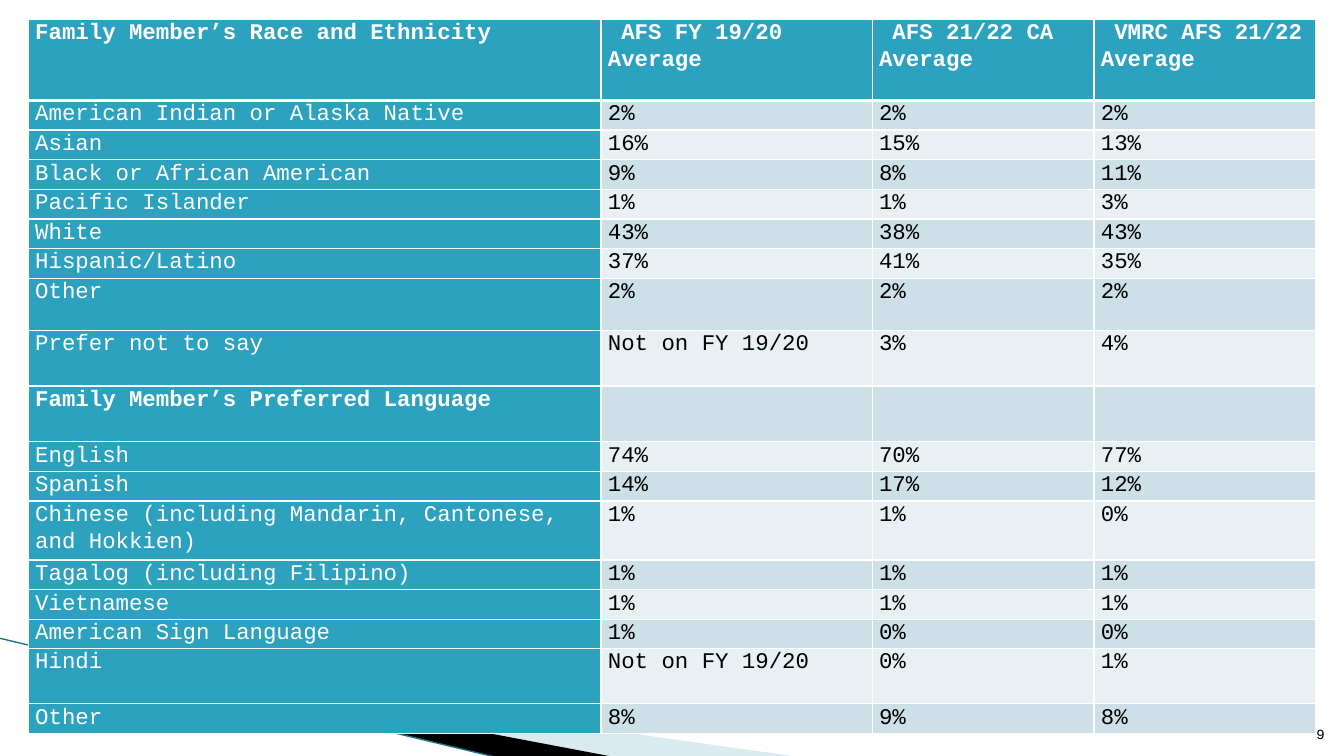
from lxml import etree
from pptx import Presentation
from pptx import util as u
from pptx.dml.color import RGBColor
from pptx.enum import shapes, text
from pptx.oxml import ns

WHITE = RGBColor(0xFF, 0xFF, 0xFF)
BLACK = RGBColor(0x00, 0x00, 0x00)
TEAL = RGBColor(0x2D, 0xA2, 0xBF)
DARK_TEAL = RGBColor(0x1A, 0x72, 0x85)
SWOOSH_BLUE = RGBColor(0xA0, 0xCB, 0xDC)
BANDS = [RGBColor(0xCD, 0xE0, 0xE8), RGBColor(0xE8, 0xF0, 0xF4)]
FONT = "Courier New"

COLUMN_WIDTHS = [5.68, 2.69, 2.2, 2.2]
LINE, SHORT, TALL, DOUBLE, HEADER = 21.2, 19.4, 39.8, 42.2, 58

ROWS = [
    (HEADER, "Family Member’s Race and Ethnicity", " AFS FY 19/20 Average",
     " AFS 21/22 CA Average", " VMRC AFS 21/22 Average"),
    (LINE, "American Indian or Alaska Native", "2%", "2%", "2%"),
    (LINE, "Asian", "16%", "15%", "13%"),
    (LINE, "Black or African American", "9%", "8%", "11%"),
    (LINE, "Pacific Islander", "1%", "1%", "3%"),
    (LINE, "White", "43%", "38%", "43%"),
    (LINE, "Hispanic/Latino", "37%", "41%", "35%"),
    (37.2, "Other", "2%", "2%", "2%"),
    (TALL, "Prefer not to say", "Not on FY 19/20", "3%", "4%"),
    (TALL, "Family Member’s Preferred Language", "", "", ""),
    (LINE, "English", "74%", "70%", "77%"),
    (LINE, "Spanish", "14%", "17%", "12%"),
    (DOUBLE, "Chinese (including Mandarin, Cantonese, and Hokkien)", "1%", "1%", "0%"),
    (LINE, "Tagalog (including Filipino)", "1%", "1%", "1%"),
    (LINE, "Vietnamese", "1%", "1%", "1%"),
    (SHORT, "American Sign Language", "1%", "0%", "0%"),
    (TALL, "Hindi", "Not on FY 19/20", "0%", "1%"),
    (LINE, "Other", "8%", "9%", "8%"),
]


def write_text(frame, words, size=16, color=BLACK, bold=False, align=None, spacing=None):
    frame.word_wrap = True
    paragraph = frame.paragraphs[0]
    paragraph.alignment = align
    paragraph.line_spacing = spacing
    paragraph.font.size = u.Pt(size)
    if words:
        run = paragraph.add_run()
        run.text = words
        run.font.name = FONT
        run.font.size = u.Pt(size)
        run.font.bold = bold
        run.font.color.rgb = color


def add_swoosh(slide, points, color, opacity=100):
    start, *rest = [(u.Inches(x), u.Inches(y)) for x, y in points]
    builder = slide.shapes.build_freeform(*start)
    builder.add_line_segments(rest)
    shape = builder.convert_to_shape()
    shape.shadow.inherit = False
    shape.line.fill.background()
    shape.fill.solid()
    shape.fill.fore_color.rgb = color
    if opacity < 100:
        color_element = shape.fill._xPr.find(".//" + ns.qn("a:srgbClr"))
        etree.SubElement(color_element, ns.qn("a:alpha"), val=str(opacity * 1000))


def add_edge_line(slide, start, end, color, width):
    points = [u.Inches(value) for value in start + end]
    connector = slide.shapes.add_connector(shapes.MSO_CONNECTOR.STRAIGHT, *points)
    connector.line.color.rgb = color
    connector.line.width = u.Pt(width)
    etree.SubElement(connector._element.spPr, ns.qn("a:effectLst"))


def add_page_number(slide, words):
    box = slide.shapes.add_textbox(u.Inches(12.61), u.Inches(7.01), u.Inches(0.53), u.Inches(0.4))
    frame = box.text_frame
    frame.margin_left = frame.margin_right = 0
    frame.vertical_anchor = text.MSO_ANCHOR.BOTTOM
    write_text(frame, words, size=10, align=text.PP_ALIGN.RIGHT)


def set_borders(cell, widths):
    properties = cell._tc.get_or_add_tcPr()
    for index, (side, width) in enumerate(widths.items()):
        line = etree.Element(ns.qn(f"a:ln{side}"), w=str(u.Pt(width)))
        fill = etree.SubElement(line, ns.qn("a:solidFill"))
        etree.SubElement(fill, ns.qn("a:srgbClr"), val=str(WHITE))
        properties.insert(index, line)


def format_cell(cell, words, row, column):
    is_label = row == 0 or column == 0
    is_heading = row == 0 or words.startswith("Family Member")
    cell.margin_left = cell.margin_right = u.Inches(0.07)
    cell.margin_top = cell.margin_bottom = 0
    cell.fill.solid()
    cell.fill.fore_color.rgb = TEAL if is_label else BANDS[(row - 1) % 2]
    write_text(cell.text_frame, words, color=WHITE if is_label else BLACK,
               bold=is_heading, spacing=1.07)
    set_borders(cell, {"L": 1, "R": 1, "T": 3 if row == 1 else 1, "B": 3 if row == 0 else 1})


def add_survey_table(slide, left, top):
    frame = slide.shapes.add_table(
        len(ROWS), len(COLUMN_WIDTHS), u.Inches(left), u.Inches(top),
        u.Inches(sum(COLUMN_WIDTHS)), u.Pt(sum(row[0] for row in ROWS)))
    table = frame.table
    for column, width in zip(table.columns, COLUMN_WIDTHS):
        column.width = u.Inches(width)
    for row, (height, *entries) in enumerate(ROWS):
        table.rows[row].height = u.Pt(height)
        for column, words in enumerate(entries):
            format_cell(table.cell(row, column), words, row, column)


def main():
    presentation = Presentation()
    presentation.slide_width = u.Inches(13.33)
    presentation.slide_height = u.Inches(7.5)
    slide = presentation.slides.add_slide(presentation.slide_layouts[6])
    add_swoosh(slide, [(0.73, 6.5), (7.93, 7.51), (6.08, 7.51)], SWOOSH_BLUE, opacity=40)
    add_swoosh(slide, [(0.71, 6.49), (6.09, 7.51), (4.96, 7.52)], BLACK)
    add_edge_line(slide, (-0.01, 6.33), (4.95, 7.52), DARK_TEAL, 0.95)
    add_page_number(slide, "9")
    add_survey_table(slide, 0.28, 0.19)
    presentation.save("out.pptx")


if __name__ == "__main__":
    main()
